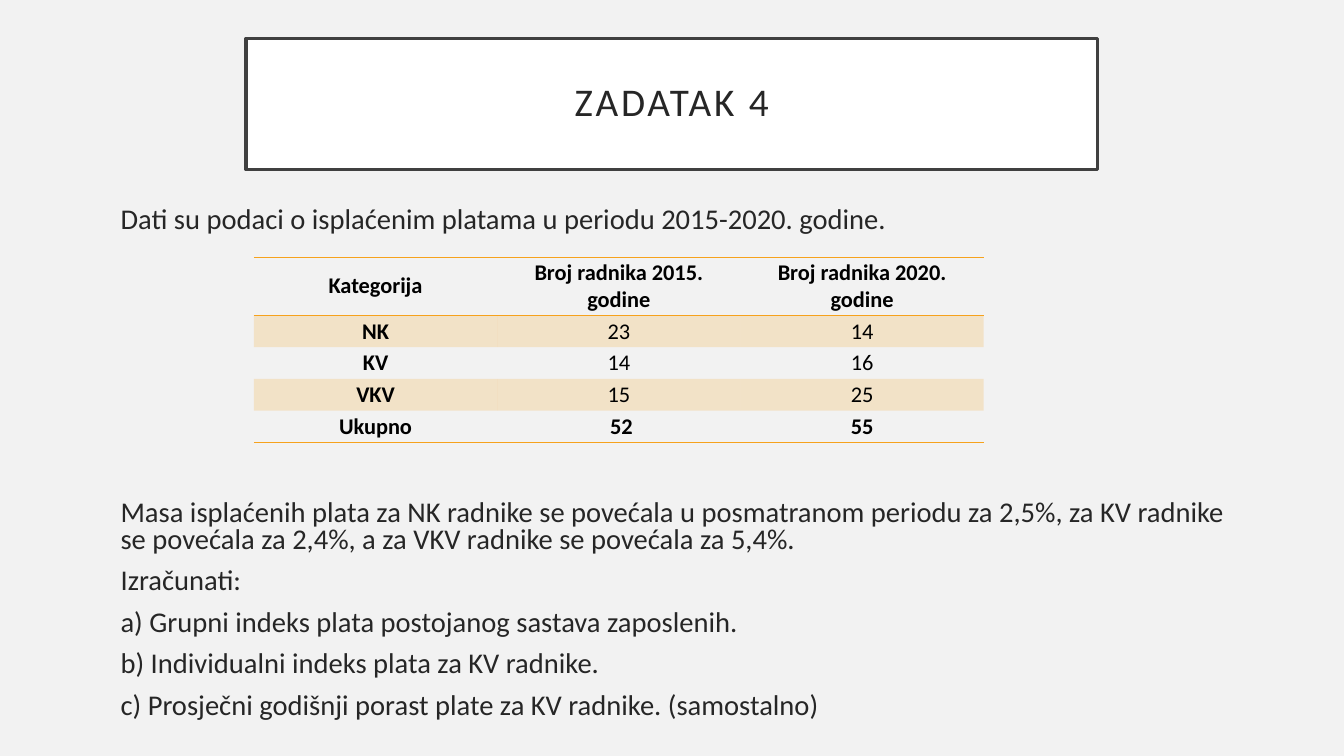
from lxml.etree import SubElement
from pptx import Presentation
from pptx.dml.color import RGBColor
from pptx.enum.shapes import MSO_SHAPE
from pptx.enum.text import MSO_ANCHOR, PP_ALIGN
from pptx.oxml.ns import qn
from pptx.util import Cm, Pt

INK, EDGE, GOLD = "262626", "404040", "F6A21D"
PLAIN = "{2D5ABB26-0587-4C30-8999-92F81FD0307C}"  # table style without grid

INTRO = ["Dati su podaci o isplaćenim platama u periodu 2015-2020. godine."]
TASKS = [
    "Masa isplaćenih plata za NK radnike se povećala u posmatranom periodu "
    "za 2,5%, za KV radnike se povećala za 2,4%, a za VKV radnike se "
    "povećala za 5,4%.",
    "Izračunati:",
    "a) Grupni indeks plata postojanog sastava zaposlenih.",
    "b) Individualni indeks plata za KV radnike.",
    "c) Prosječni godišnji porast plate za KV radnike. (samostalno)",
]
ROWS = [
    ["Kategorija", "Broj radnika 2015. godine", "Broj radnika 2020. godine"],
    ["NK", "23", "14"],
    ["KV", "14", "16"],
    ["VKV", "15", "25"],
    ["Ukupno", " 52", "55"],
]


def color(code):
    return RGBColor.from_string(code)


def write(par, text, size=20.4, ink=INK, bold=False, align=PP_ALIGN.LEFT,
          line=None, before=0, track=0):
    par.alignment = align
    par.space_before = Pt(before)
    if line:
        par.line_spacing = line
    run = par.add_run()
    run.text = text
    font = run.font
    font.name, font.size, font.bold = "Calibri", Pt(size), bold
    font.color.rgb = color(ink)
    if track:
        run._r.get_or_add_rPr().set("spc", str(track * 100))


def title(slide, text, left, top, width, height):
    box = slide.shapes.add_shape(MSO_SHAPE.RECTANGLE, Cm(left), Cm(top),
                                 Cm(width), Cm(height))
    box.shadow.inherit = False
    box.fill.solid()
    box.fill.fore_color.rgb = color("FFFFFF")
    box.line.color.rgb = color(EDGE)
    box.line.width = Pt(2.5)
    frame = box.text_frame
    frame.word_wrap = True
    frame.vertical_anchor = MSO_ANCHOR.MIDDLE
    write(frame.paragraphs[0], text, size=28, align=PP_ALIGN.CENTER,
          line=0.9, track=2)


def body(slide, lines, left, top, width, height):
    box = slide.shapes.add_textbox(Cm(left), Cm(top), Cm(width), Cm(height))
    frame = box.text_frame
    frame.word_wrap = True
    frame.margin_left = Cm(0.55)
    for i, text in enumerate(lines):
        par = frame.add_paragraph() if i else frame.paragraphs[0]
        write(par, text, line=0.8, before=10)


def rule(cell, side):
    """Draw a gold border on one side of a cell."""
    edge = SubElement(cell._tc.get_or_add_tcPr(), qn("a:" + side),
                      w=str(Pt(1)))
    fill = SubElement(edge, qn("a:solidFill"))
    SubElement(fill, qn("a:srgbClr"), val=GOLD)


def shade(cell):
    """Fill a cell with gold at 20% opacity."""
    cell.fill.solid()
    cell.fill.fore_color.rgb = color(GOLD)
    tone = cell._tc.tcPr.find(qn("a:solidFill")).find(qn("a:srgbClr"))
    SubElement(tone, qn("a:alpha"), val="20000")


def grid(slide, rows, left, top, width, head, high):
    last = len(rows) - 1
    table = slide.shapes.add_table(len(rows), len(rows[0]), Cm(left), Cm(top),
                                   Cm(width), Cm(head + last * high)).table
    table._tbl.tblPr.find(qn("a:tableStyleId")).text = PLAIN
    for r, row in enumerate(rows):
        table.rows[r].height = Cm(high if r else head)
        for c, text in enumerate(row):
            cell = table.cell(r, c)
            cell.margin_left = cell.margin_right = Cm(0.18)
            cell.margin_top = cell.margin_bottom = 0
            cell.vertical_anchor = MSO_ANCHOR.MIDDLE
            write(cell.text_frame.paragraphs[0], text, size=16, ink="000000",
                  bold=c == 0 or r in (0, last), align=PP_ALIGN.CENTER)
            # Borders around the header and below the total
            if r == 0:
                rule(cell, "lnT")
            if r in (0, last):
                rule(cell, "lnB")
            # Banded rows
            if r % 2:
                shade(cell)
            else:
                cell.fill.background()


def main():
    deck = Presentation()
    deck.slide_width, deck.slide_height = Cm(33.87), Cm(19.05)
    slide = deck.slides.add_slide(deck.slide_layouts[6])
    slide.background.fill.solid()
    slide.background.fill.fore_color.rgb = color("F2F2F2")

    title(slide, "ZADATAK 4", 6.2, 0.97, 21.46, 3.3)
    body(slide, INTRO, 2.49, 5.11, 28.91, 1.3)
    grid(slide, ROWS, 6.4, 6.48, 18.39, 1.47, 0.8)
    body(slide, TASKS, 2.49, 12.48, 28.91, 6.5)
    deck.save("out.pptx")


if __name__ == "__main__":
    main()
